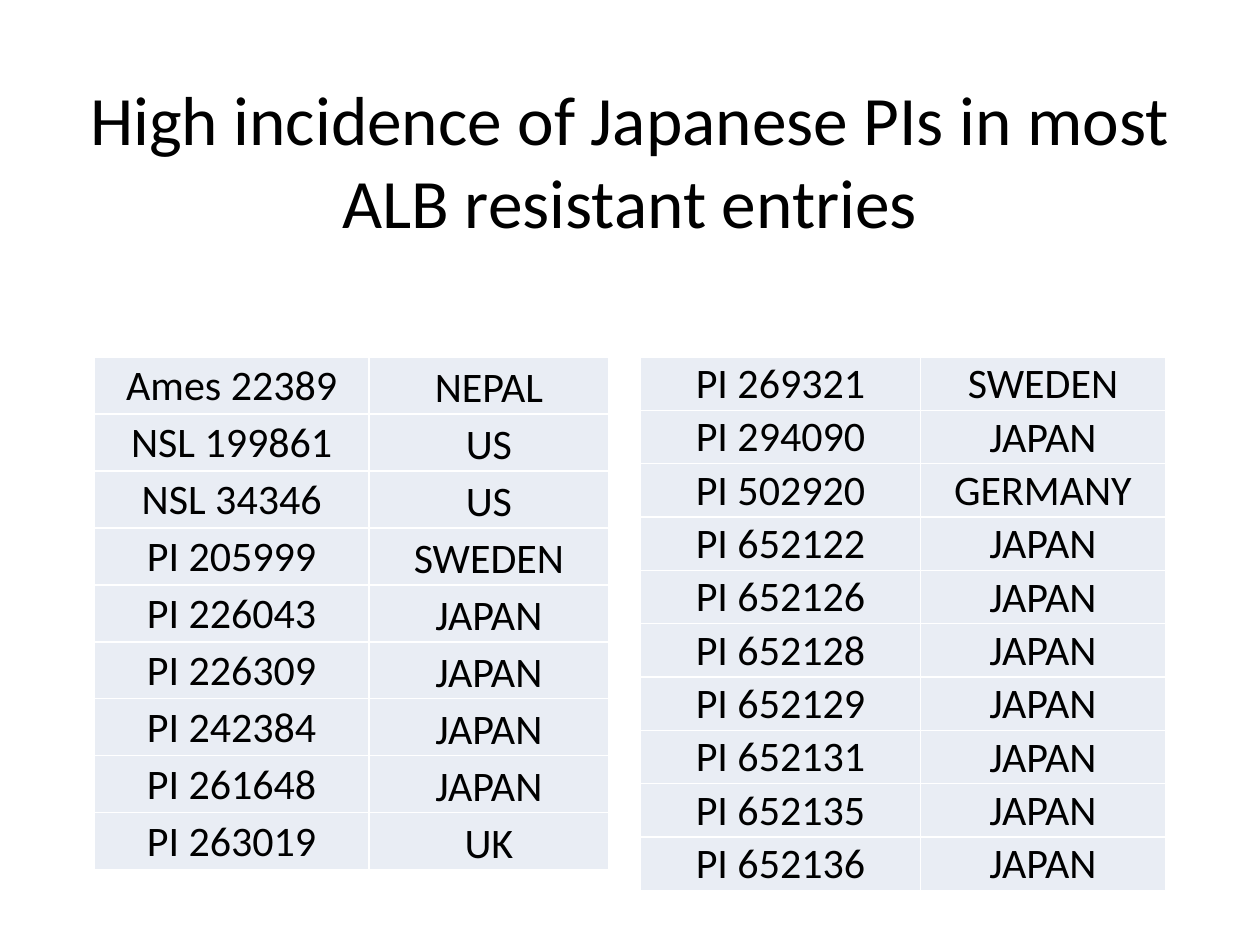
from dataclasses import dataclass

from lxml.etree import SubElement
from pptx import Presentation
from pptx.dml.color import RGBColor
from pptx.enum.text import MSO_ANCHOR as Anchor, PP_ALIGN as Align
from pptx.oxml.ns import qn
from pptx.util import Pt


@dataclass(frozen=True)
class Theme:
    font: str = "Calibri"
    ink: str = "000000"
    cell: str = "E9EDF4"
    border: str = "FFFFFF"
    title_size: float = 39.6
    cell_size: float = 24
    border_width: float = 1


class SlideBuilder:
    def __init__(self, slide, theme):
        self.slide = slide
        self.theme = theme

    def set_text(self, frame, text, size):
        paragraph = frame.paragraphs[0]
        paragraph.text = text
        paragraph.alignment = Align.CENTER
        paragraph.font.name = self.theme.font
        paragraph.font.size = Pt(size)
        paragraph.font.color.rgb = RGBColor.from_string(self.theme.ink)

    def title(self, text, left, top, width, height):
        box = self.slide.shapes.add_textbox(Pt(left), Pt(top), Pt(width), Pt(height))
        frame = box.text_frame
        frame.word_wrap = True
        frame.vertical_anchor = Anchor.MIDDLE
        self.set_text(frame, text, self.theme.title_size)

    def borders(self, cell):
        properties = cell._tc.get_or_add_tcPr()
        for position, side in enumerate(("a:lnL", "a:lnR", "a:lnT", "a:lnB")):
            line = SubElement(properties, qn(side), w=str(Pt(self.theme.border_width)))
            fill = SubElement(line, qn("a:solidFill"))
            SubElement(fill, qn("a:srgbClr"), val=self.theme.border)
            properties.insert(position, line)  # borders precede the fill

    def cell(self, cell, text, anchor):
        cell.margin_left = cell.margin_right = cell.margin_top = Pt(0.75)
        cell.margin_bottom = 0
        cell.vertical_anchor = anchor
        cell.fill.solid()
        cell.fill.fore_color.rgb = RGBColor.from_string(self.theme.cell)
        self.borders(cell)
        self.set_text(cell.text_frame, text, self.theme.cell_size)

    def table(self, entries, left, top, column_widths, row_height):
        table = self.slide.shapes.add_table(
            len(entries), len(column_widths), Pt(left), Pt(top),
            Pt(sum(column_widths)), Pt(row_height * len(entries))).table
        table.first_row = table.horz_banding = False
        for column, width in zip(table.columns, column_widths):
            column.width = Pt(width)
        for row, entry in zip(table.rows, entries):
            row.height = Pt(row_height)
            for cell, text, anchor in zip(row.cells, entry, (Anchor.MIDDLE, Anchor.BOTTOM)):
                self.cell(cell, text, anchor)


FIRST_ENTRIES = [
    ("Ames 22389", "NEPAL"),
    ("NSL 199861", "US"),
    ("NSL 34346", "US"),
    ("PI 205999", "SWEDEN"),
    ("PI 226043", "JAPAN"),
    ("PI 226309", "JAPAN"),
    ("PI 242384", "JAPAN"),
    ("PI 261648", "JAPAN"),
    ("PI 263019", "UK"),
]
SECOND_ENTRIES = [
    ("PI 269321", "SWEDEN"),
    ("PI 294090", "JAPAN"),
    ("PI 502920", "GERMANY"),
    ("PI 652122", "JAPAN"),
    ("PI 652126", "JAPAN"),
    ("PI 652128", "JAPAN"),
    ("PI 652129", "JAPAN"),
    ("PI 652131", "JAPAN"),
    ("PI 652135", "JAPAN"),
    ("PI 652136", "JAPAN"),
]
TABLE_TOP = 204


def main():
    deck = Presentation()
    deck.slide_width, deck.slide_height = Pt(720), Pt(540)
    builder = SlideBuilder(deck.slides.add_slide(deck.slide_layouts[6]), Theme())

    # Heading
    builder.title("High incidence of Japanese PIs in most ALB resistant entries",
                  36, 21.6, 648, 139)

    # Resistant entries and their countries of origin
    builder.table(FIRST_ENTRIES, 54, TABLE_TOP, (156.8, 137.2), 32.55)
    builder.table(SECOND_ENTRIES, 366, TABLE_TOP, (160, 140), 30.5)

    deck.save("out.pptx")


if __name__ == "__main__":
    main()
